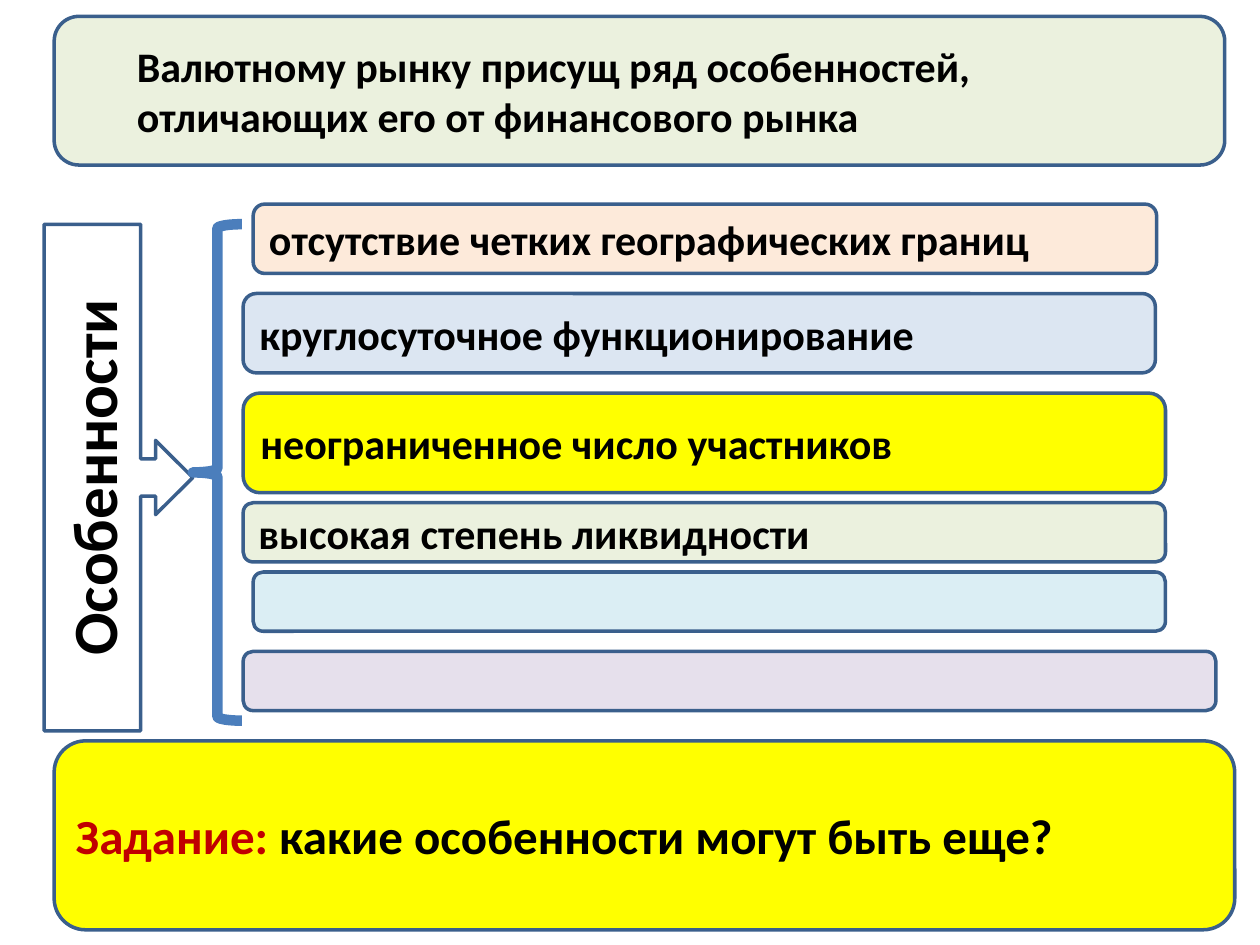
from pptx import Presentation
from pptx.dml.color import RGBColor
from pptx.enum.shapes import MSO_SHAPE
from pptx.enum.text import MSO_ANCHOR, PP_ALIGN
from pptx.util import Inches, Pt

BLACK = RGBColor(0x00, 0x00, 0x00)
WHITE = RGBColor(0xFF, 0xFF, 0xFF)
RED = RGBColor(0xC0, 0x00, 0x00)
YELLOW = RGBColor(0xFF, 0xFF, 0x00)
GREEN = RGBColor(0xEB, 0xF1, 0xDE)
PEACH = RGBColor(0xFD, 0xEA, 0xDA)
BLUE = RGBColor(0xDC, 0xE6, 0xF2)
AQUA = RGBColor(0xDB, 0xEE, 0xF4)
LILAC = RGBColor(0xE6, 0xE0, 0xEC)
OUTLINE = RGBColor(0x3A, 0x5F, 0x8C)
BRACE = RGBColor(0x4B, 0x7E, 0xBC)

deck = Presentation()
deck.slide_width = Inches(10)
deck.slide_height = Inches(7.5)
page = deck.slides.add_slide(deck.slide_layouts[6])


def add_box(kind, bounds, fill, line=OUTLINE, weight=2):
    box = page.shapes.add_shape(kind, *[Inches(length) for length in bounds])
    box.shadow.inherit = False
    if fill is None:
        box.fill.background()
    else:
        box.fill.solid()
        box.fill.fore_color.rgb = fill
    box.line.color.rgb = line
    box.line.width = Pt(weight)
    return box


def write(box, text, size=24, color=BLACK, align=PP_ALIGN.LEFT):
    box.text_frame.word_wrap = True
    box.text_frame.vertical_anchor = MSO_ANCHOR.MIDDLE
    para = box.text_frame.paragraphs[0]
    para.alignment = align
    span = para.add_run()
    span.text = text
    span.font.name = "Calibri"
    span.font.size = Pt(size)
    span.font.bold = True
    span.font.color.rgb = color
    return para


title = add_box(MSO_SHAPE.ROUNDED_RECTANGLE, (0.43, 0.13, 9.29, 1.18), GREEN)
para = write(title, "Валютному рынку присущ ряд особенностей, отличающих его от финансового рынка")
para.level = 1
para.space_after = Pt(6)
para_format = para._p.get_or_add_pPr()
para_format.set("marL", str(Inches(0.5)))
para_format.set("indent", "0")

callout = add_box(MSO_SHAPE.RIGHT_ARROW_CALLOUT, (0.35, 1.78, 1.18, 4.02), WHITE)
write(callout, "Особенности", size=36, align=PP_ALIGN.CENTER)
callout.text_frame._txBody.bodyPr.set("vert", "vert270")

add_box(MSO_SHAPE.LEFT_BRACE, (1.53, 1.78, 0.39, 3.94), None, line=BRACE, weight=6)

features = [
    ((2.01, 1.62, 7.17, 0.55), PEACH, "отсутствие четких географических границ"),
    ((1.93, 2.33, 7.24, 0.63), BLUE, "круглосуточное функционирование"),
    ((1.93, 3.12, 7.32, 0.79), YELLOW, "неограниченное число участников"),
    ((1.93, 3.99, 7.32, 0.47), GREEN, "высокая степень ликвидности"),
    ((2.01, 4.54, 7.24, 0.47), AQUA, None),
    ((1.93, 5.17, 7.72, 0.47), LILAC, None),
]
for bounds, fill, text in features:
    feature = add_box(MSO_SHAPE.ROUNDED_RECTANGLE, bounds, fill)
    if text:
        write(feature, text)

task = add_box(MSO_SHAPE.ROUNDED_RECTANGLE, (0.43, 5.88, 9.37, 1.5), YELLOW)
write(task, "Задание: ", size=28, color=RED)
write(task, "какие особенности могут быть еще?", size=28)

deck.save("out.pptx")
